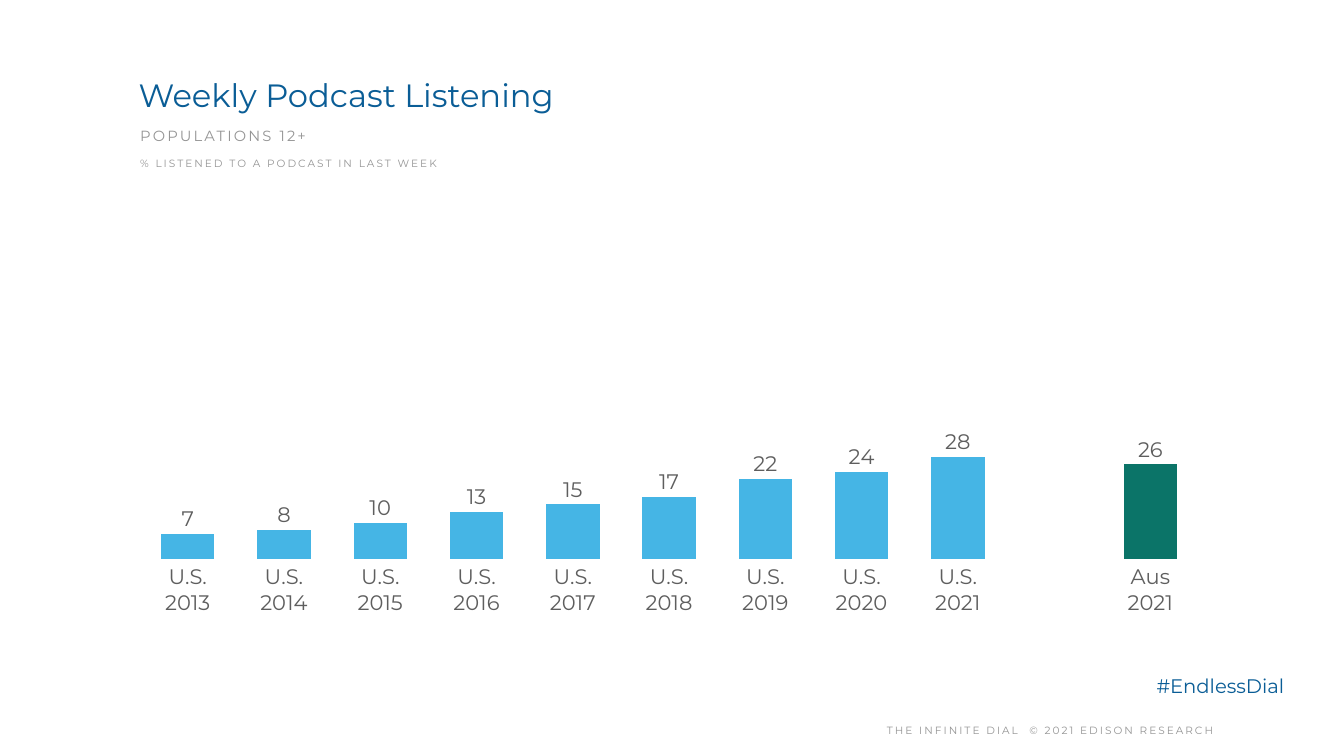
"""Build the weekly podcast listening slide with its column chart."""
import lxml.etree
import pptx
import pptx.chart.data
import pptx.dml.color
import pptx.enum.chart
import pptx.enum.text
import pptx.oxml.ns
import pptx.util

Inches = pptx.util.Inches
Pt = pptx.util.Pt
RGBColor = pptx.dml.color.RGBColor
PP_ALIGN = pptx.enum.text.PP_ALIGN
MSO_ANCHOR = pptx.enum.text.MSO_ANCHOR

BLUE = RGBColor(0x0A, 0x5D, 0x96)
SKY = RGBColor(0x45, 0xB5, 0xE5)
GREEN = RGBColor(0x0B, 0x74, 0x68)
GREY = RGBColor(0x95, 0x95, 0x95)
DARK_GREY = RGBColor(0x5E, 0x5E, 0x5E)
FONT = "Montserrat"

TITLE = "Weekly Podcast Listening"
TITLE_BOX = (2.67, 1.41, 21.69, 1.23)
TEXTS = [
    dict(text="POPULATIONS 12+", box=(2.7, 2.39, 22.55, 0.55), size=21, color=GREY,
         line=1.2, tracking=3.1),
    dict(text="% LISTENED TO A PODCAST IN LAST WEEK", box=(2.7, 2.98, 7.22, 0.46),
         size=15, color=GREY, line=1.2, tracking=2.9),
    dict(text="#EndlessDial", box=(22.87, 13.25, 3.29, 0.68), size=28, color=BLUE,
         line=1.1, anchor=MSO_ANCHOR.TOP),
    dict(text="THE INFINITE DIAL  © 2021 EDISON RESEARCH", box=(14.95, 14.21, 11.78, 0.53),
         size=15, color=GREY, line=1.2, tracking=2.9, align=PP_ALIGN.CENTER),
]
US_SHARES = [7, 8, 10, 13, 15, 17, 22, 24, 28]
US_FIRST_YEAR = 2013
AUSTRALIA = ("Aus\n2021", 26)
CHART_BOX = (2.47, 2.64, 21.42, 9.79)
PLOT = {"x": 0.014, "y": 0.123, "w": 0.981, "h": 0.741}


def style_font(font, size, color):
    font.name = FONT
    font.size = Pt(size)
    font.bold = False
    font.color.rgb = color


def fill_text(shape, text, size, color, line=1.0, tracking=0,
              align=PP_ALIGN.LEFT, anchor=MSO_ANCHOR.MIDDLE):
    frame = shape.text_frame
    frame.word_wrap = True
    frame.auto_size = pptx.enum.text.MSO_AUTO_SIZE.NONE
    frame.vertical_anchor = anchor
    frame.margin_left = frame.margin_right = Inches(0.08)
    frame.margin_top = frame.margin_bottom = Inches(0.08)
    frame.text = text
    paragraph = frame.paragraphs[0]
    paragraph.alignment = align
    paragraph.line_spacing = line
    paragraph.space_before = Pt(0)
    run = paragraph.runs[0]
    style_font(run.font, size, color)
    if tracking:
        run._r.get_or_add_rPr().set("spc", str(round(tracking * 100)))


def set_plot_layout(chart):
    plot_area = chart._chartSpace.chart.plotArea
    qn = pptx.oxml.ns.qn
    for old_layout in plot_area.findall(qn("c:layout")):
        plot_area.remove(old_layout)
    layout = lxml.etree.Element(qn("c:layout"))
    manual = lxml.etree.SubElement(layout, qn("c:manualLayout"))
    settings = [("layoutTarget", "inner"), ("xMode", "edge"), ("yMode", "edge"), *PLOT.items()]
    for name, value in settings:
        lxml.etree.SubElement(manual, qn(f"c:{name}")).set("val", str(value))
    plot_area.insert(0, layout)


def add_listening_chart(slide):
    enums = pptx.enum.chart
    data = pptx.chart.data.CategoryChartData()
    years = range(US_FIRST_YEAR, US_FIRST_YEAR + len(US_SHARES))
    data.categories = [f"U.S.\n{year}" for year in years] + ["", AUSTRALIA[0]]
    data.add_series("Series 1", US_SHARES + [None, AUSTRALIA[1]])
    chart = slide.shapes.add_chart(
        enums.XL_CHART_TYPE.COLUMN_CLUSTERED, *map(Inches, CHART_BOX), data).chart
    chart.has_legend = False
    chart.has_title = False
    style_font(chart.font, 10, GREY)
    set_plot_layout(chart)

    category_axis = chart.category_axis
    category_axis.tick_label_position = enums.XL_TICK_LABEL_POSITION.LOW
    category_axis.major_tick_mark = enums.XL_TICK_MARK.NONE
    category_axis.format.line.fill.background()
    style_font(category_axis.tick_labels.font, 30, DARK_GREY)

    value_axis = chart.value_axis
    value_axis.visible = False
    value_axis.has_major_gridlines = False
    value_axis.minimum_scale = 0
    value_axis.maximum_scale = 100
    value_axis.major_unit = 20

    plot = chart.plots[0]
    plot.gap_width = 80
    plot.overlap = -10
    plot.vary_by_categories = False
    series = plot.series[0]
    series.format.fill.solid()
    series.format.fill.fore_color.rgb = SKY
    australia_fill = series.points[len(US_SHARES) + 1].format.fill
    australia_fill.solid()
    australia_fill.fore_color.rgb = GREEN

    labels = series.data_labels
    labels.show_value = True
    labels.position = enums.XL_LABEL_POSITION.OUTSIDE_END
    labels.number_format = "#,##0"
    labels.number_format_is_linked = False
    style_font(labels.font, 30, DARK_GREY)


def main():
    presentation = pptx.Presentation()
    presentation.slide_width = Inches(26.67)
    presentation.slide_height = Inches(15)
    slide = presentation.slides.add_slide(presentation.slide_layouts[5])
    add_listening_chart(slide)

    title = slide.shapes.title
    title.left, title.top, title.width, title.height = map(Inches, TITLE_BOX)
    fill_text(title, TITLE, 46, BLUE, anchor=MSO_ANCHOR.TOP)
    for item in TEXTS:
        style = dict(item)
        box = slide.shapes.add_textbox(*map(Inches, style.pop("box")))
        fill_text(box, **style)

    presentation.save("out.pptx")


if __name__ == "__main__":
    main()
